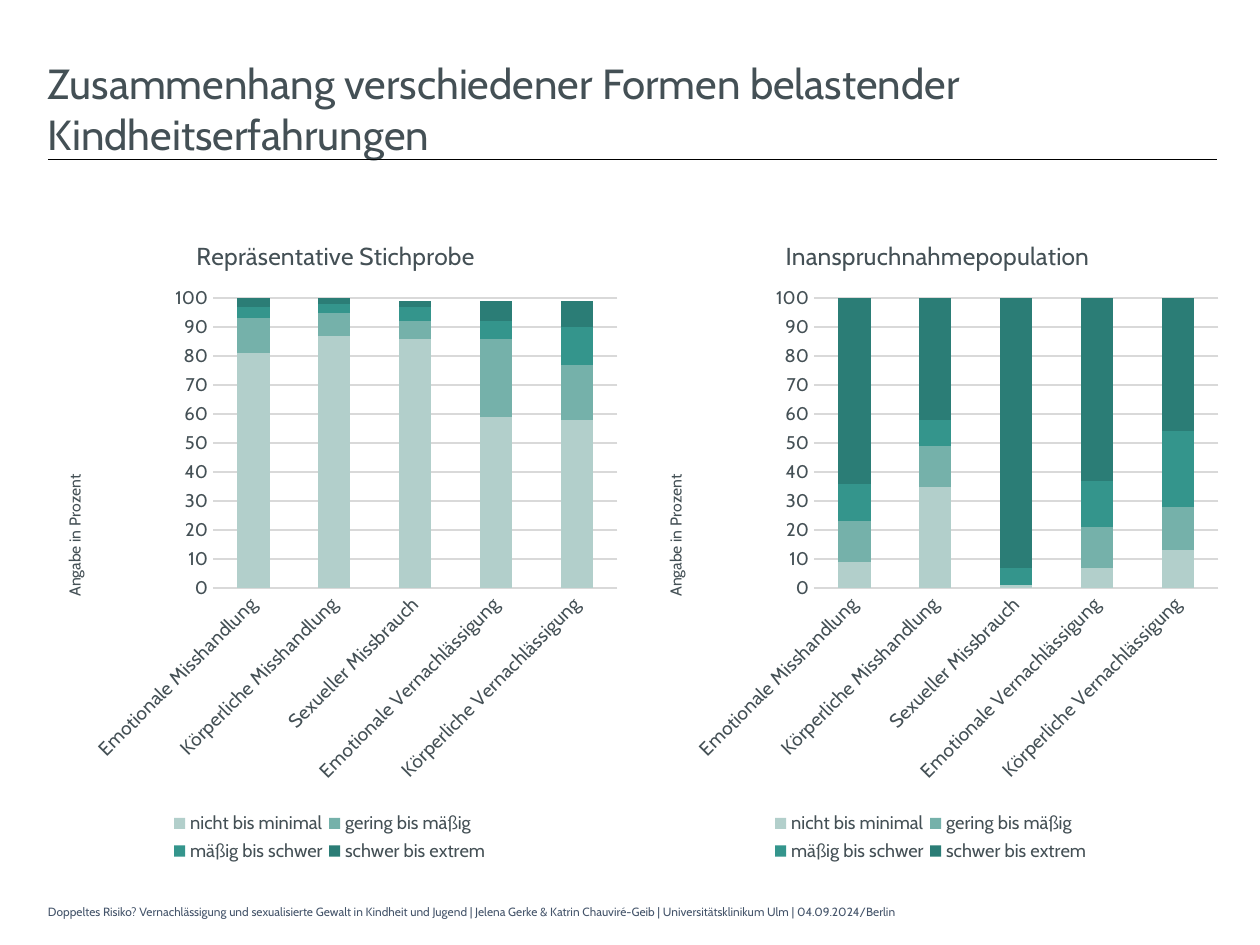
from dataclasses import dataclass

from lxml import etree
from pptx import Presentation
from pptx import util as u
from pptx.chart import data as chart_data
from pptx.dml.color import RGBColor
from pptx.enum import chart as chart_enum, shapes, text
from pptx.oxml import ns

FONT = "Cabin"
INK = RGBColor(0x44, 0x50, 0x55)
FOOTER_INK = RGBColor(0x44, 0x54, 0x6A)
GRID = RGBColor(0xD9, 0xD9, 0xD9)
BLACK = RGBColor(0, 0, 0)

CATEGORIES = [
    "Emotionale Misshandlung",
    "Körperliche Misshandlung",
    "Sexueller Missbrauch",
    "Emotionale Vernachlässigung",
    "Körperliche Vernachlässigung",
]
SEVERITIES = {
    "nicht bis minimal": RGBColor(0xB2, 0xCF, 0xCB),
    "gering bis mäßig": RGBColor(0x75, 0xB1, 0xAA),
    "mäßig bis schwer": RGBColor(0x34, 0x95, 0x8C),
    "schwer bis extrem": RGBColor(0x2B, 0x7D, 0x76),
}


@dataclass(frozen=True)
class SampleChart:
    title: str
    left: float
    title_x: float  # fraction of the chart width
    values: tuple  # one row for each severity


SAMPLES = [
    SampleChart("Repräsentative Stichprobe", 17.3, 0.27, (
        (81, 87, 86, 59, 58),
        (12, 8, 6, 27, 19),
        (4, 3, 5, 6, 13),
        (3, 3, 2, 7, 9),
    )),
    SampleChart("Inanspruchnahmepopulation", 360.7, 0.25, (
        (9, 35, 1, 7, 13),
        (14, 14, 0, 14, 15),
        (13, 9, 6, 16, 26),
        (64, 43, 93, 63, 46),
    )),
]


def style_font(font, size: float, color: RGBColor = INK) -> None:
    font.name = FONT
    font.size = u.Pt(size)
    font.bold = False
    font.color.rgb = color


def fill_frame(frame, words: str, size: float, color: RGBColor,
               anchor, margins: tuple) -> None:
    """Write one left-aligned paragraph; margins are left, top, right, bottom."""
    frame.text = words
    frame.word_wrap = True
    frame.auto_size = text.MSO_AUTO_SIZE.NONE
    frame.vertical_anchor = anchor
    (frame.margin_left, frame.margin_top,
     frame.margin_right, frame.margin_bottom) = map(u.Pt, margins)
    para = frame.paragraphs[0]
    para.alignment = text.PP_ALIGN.LEFT
    style_font(para.runs[0].font, size, color)


def place_part(part, x: float, y: float, width: float = 0, height: float = 0,
               inner: bool = False) -> None:
    """Give a chart part a manual layout in fractions of the chart."""
    for old in part.findall(ns.qn("c:layout")):
        part.remove(old)
    layout = etree.Element(ns.qn("c:layout"))
    manual = etree.SubElement(layout, ns.qn("c:manualLayout"))
    settings = [("layoutTarget", "inner")] if inner else []
    settings += [("xMode", "edge"), ("yMode", "edge"), ("x", x), ("y", y)]
    if width:
        settings += [("w", width), ("h", height)]
    for tag, value in settings:
        etree.SubElement(manual, ns.qn(f"c:{tag}")).set("val", str(value))
    overlay = part.find(ns.qn("c:overlay"))
    if overlay is None:
        part.insert(0, layout)
    else:
        overlay.addprevious(layout)


def write_title(title, words: str, size: float, x: float, y: float) -> None:
    title.text_frame.text = words
    style_font(title.text_frame.paragraphs[0].runs[0].font, size)
    place_part(title._element, x, y)


def rotate_text(element, degrees: int) -> None:
    body = element.find(f".//{ns.qn('a:bodyPr')}")
    body.set("rot", str(degrees * 60000))
    body.set("vert", "horz")


def draw_chart(page, sample: SampleChart) -> None:
    table = chart_data.CategoryChartData()
    table.categories = CATEGORIES
    for name, values in zip(SEVERITIES, sample.values):
        table.add_series(name, values)
    chart = page.shapes.add_chart(
        chart_enum.XL_CHART_TYPE.COLUMN_STACKED, u.Pt(sample.left),
        u.Pt(118.8), u.Pt(342.4), u.Pt(376.6), table).chart
    style_font(chart.font, 10.5)
    chart.has_title = True
    write_title(chart.chart_title, sample.title, 14, sample.title_x, 0.04)

    # Columns
    plot = chart.plots[0]
    plot.gap_width = 150
    plot.overlap = 100
    plot.vary_by_categories = False
    for series, color in zip(plot.series, SEVERITIES.values()):
        series.format.fill.solid()
        series.format.fill.fore_color.rgb = color

    # Axes
    category, value = chart.category_axis, chart.value_axis
    for axis, size in ((category, 11), (value, 10.5)):
        axis.major_tick_mark = chart_enum.XL_TICK_MARK.NONE
        axis.minor_tick_mark = chart_enum.XL_TICK_MARK.NONE
        style_font(axis.tick_labels.font, size)
    rotate_text(category._element.find(ns.qn("c:txPr")), -45)
    value.minimum_scale, value.maximum_scale, value.major_unit = 0, 100, 10
    value.has_major_gridlines = True
    for line in (category.format.line, value.major_gridlines.format.line):
        line.color.rgb = GRID
        line.width = u.Pt(0.75)
    value.format.line.fill.background()
    write_title(value.axis_title, "Angabe in Prozent", 9, 0.05, 0.4)
    rotate_text(value.axis_title._element, -90)

    # Legend and plot area
    chart.has_legend = True
    chart.legend.position = chart_enum.XL_LEGEND_POSITION.BOTTOM
    chart.legend.include_in_layout = False
    style_font(chart.legend.font, 10.5)
    place_part(chart.legend._element, 0.23, 0.91, 0.54, 0.09)
    plot_area = chart._chartSpace.find(f".//{ns.qn('c:plotArea')}")
    place_part(plot_area, 0.305, 0.137, 0.675, 0.44, inner=True)


def main() -> None:
    deck = Presentation()
    deck.slide_width, deck.slide_height = u.Pt(720), u.Pt(540)
    page = deck.slides.add_slide(deck.slide_layouts[5])

    # Title with rule
    title = page.shapes.title
    title.left, title.top = u.Pt(27.4), u.Pt(28.8)
    title.width, title.height = u.Pt(530.6), u.Pt(63.4)
    fill_frame(title.text_frame,
               "Zusammenhang verschiedener Formen belastender Kindheitserfahrungen",
               24, INK, text.MSO_ANCHOR.TOP, (0, 4.3, 0, 2.9))
    rule = page.shapes.add_connector(
        shapes.MSO_CONNECTOR.STRAIGHT,
        u.Pt(27.4), u.Pt(91.4), u.Pt(695.5), u.Pt(91.4))
    rule.line.color.rgb = BLACK
    rule.line.width = u.Pt(0.5)
    etree.SubElement(rule._element.spPr, ns.qn("a:effectLst"))

    # Charts
    for sample in SAMPLES:
        draw_chart(page, sample)

    # Footer
    footer = page.shapes.add_textbox(
        u.Pt(27.4), u.Pt(511.9), u.Pt(499.7), u.Pt(18))
    fill_frame(footer.text_frame,
               "Doppeltes Risiko? Vernachlässigung und sexualisierte Gewalt in "
               "Kindheit und Jugend | Jelena Gerke & Katrin Chauviré-Geib | "
               "Universitätsklinikum Ulm | 04.09.2024/Berlin",
               6.8, FOOTER_INK, text.MSO_ANCHOR.MIDDLE, (0, 3.6, 7.2, 3.6))

    deck.save("out.pptx")


if __name__ == "__main__":
    main()
